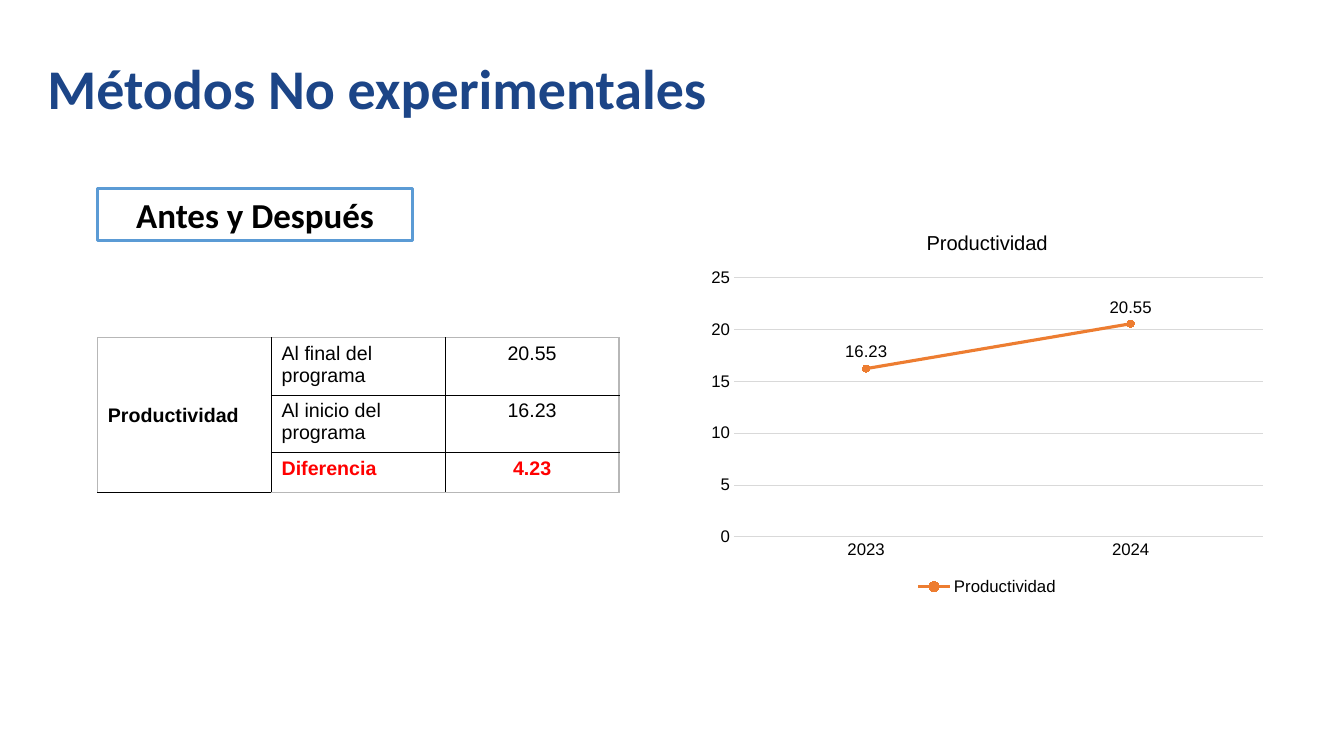
from lxml import etree
from pptx import Presentation
from pptx.chart.data import CategoryChartData
from pptx.dml.color import RGBColor
from pptx.enum.chart import (XL_CHART_TYPE, XL_LABEL_POSITION, XL_LEGEND_POSITION,
                             XL_MARKER_STYLE, XL_TICK_MARK)
from pptx.enum.shapes import MSO_SHAPE
from pptx.enum.text import MSO_ANCHOR, MSO_AUTO_SIZE, PP_ALIGN
from pptx.oxml.ns import qn
from pptx.util import Inches, Pt

LINE_CHART = XL_CHART_TYPE.LINE_MARKERS
ABOVE = XL_LABEL_POSITION.ABOVE
BOTTOM = XL_LEGEND_POSITION.BOTTOM
CIRCLE = XL_MARKER_STYLE.CIRCLE
NO_TICK = XL_TICK_MARK.NONE
RECTANGLE = MSO_SHAPE.RECTANGLE
TOP, MIDDLE = MSO_ANCHOR.TOP, MSO_ANCHOR.MIDDLE
GROW = MSO_AUTO_SIZE.SHAPE_TO_FIT_TEXT
LEFT, CENTER = PP_ALIGN.LEFT, PP_ALIGN.CENTER

TITLE_ONLY = 5
BLACK, WHITE, RED = "000000", "FFFFFF", "FF0000"
NAVY, BLUE, ORANGE = "1C4587", "5B9BD5", "ED7D31"
GRID_GRAY, FRAME_GRAY = "D9D9D9", "B7B7B7"

TITLE_FONT = {"name": "Calibri", "size": Pt(40), "bold": True}
METHOD_FONT = {"name": "Calibri", "size": Pt(25), "bold": True}
CELL_FONT = {"name": "Arial", "size": Pt(14), "bold": False}
CELL_BOLD = {**CELL_FONT, "bold": True}
CHART_FONT = {"name": "Arial", "size": Pt(12), "bold": False}
CHART_TITLE_FONT = {**CHART_FONT, "size": Pt(14.4)}

MEASURE = "Productividad"
RESULTS = [("Al final del programa", "20.55"),
           ("Al inicio del programa", "16.23"),
           ("Diferencia", "4.23")]
YEARS = {"2023": 16.23, "2024": 20.55}


def rgb(hex_color):
    return RGBColor.from_string(hex_color)


def format_font(font, values, color):
    for attribute, value in values.items():
        setattr(font, attribute, value)
    font.color.rgb = rgb(color)


def format_line(line, color, width):
    line.color.rgb = rgb(color)
    line.width = Pt(width)


def write(frame, text, font, color, align=LEFT):
    paragraph = frame.paragraphs[0]
    paragraph.alignment = align
    run = paragraph.add_run()
    run.text = text
    format_font(run.font, font, color)


def add_title(slide, text):
    title = slide.shapes.title
    title.left, title.top = Inches(0.37), Inches(0.43)
    title.width, title.height = Inches(12.59), Inches(0.88)
    frame = title.text_frame
    layout = {"margin_left": Inches(0.1), "margin_right": Inches(0.1),
              "margin_top": Inches(0.1), "margin_bottom": Inches(0.1),
              "vertical_anchor": TOP, "word_wrap": True, "auto_size": GROW}
    for attribute, value in layout.items():
        setattr(frame, attribute, value)
    write(frame, text, TITLE_FONT, NAVY)
    frame.paragraphs[0].line_spacing = 1.0


def add_method_box(slide, text):
    box = slide.shapes.add_shape(RECTANGLE, Inches(0.97), Inches(1.87),
                                 Inches(3.12), Inches(0.52))
    box.shadow.inherit = False
    box.fill.solid()
    box.fill.fore_color.rgb = rgb(WHITE)
    format_line(box.line, BLUE, 2.25)
    box.text_frame.word_wrap = True
    box.text_frame.auto_size = GROW
    box.text_frame.vertical_anchor = MIDDLE
    write(box.text_frame, text, METHOD_FONT, BLACK, CENTER)


def set_borders(cell, colors):
    properties = cell._tc.get_or_add_tcPr()
    # Borders come before the fill in the cell properties
    for index, (side, color) in enumerate(colors.items()):
        border = etree.Element(qn(f"a:ln{side}"), w=str(Pt(1)))
        fill = etree.SubElement(border, qn("a:solidFill"))
        etree.SubElement(fill, qn("a:srgbClr"), val=color)
        properties.insert(index, border)


def add_results_table(slide):
    row_count, column_count = len(RESULTS), 3
    table = slide.shapes.add_table(row_count, column_count, Inches(0.97), Inches(3.35),
                                   Inches(5.17), Inches(1.54)).table
    table.first_row = table.horz_banding = False
    for column in table.columns:
        column.width = Inches(5.17 / column_count)
    for row, height in zip(table.rows, (0.57, 0.57, 0.4)):
        row.height = Inches(height)

    # Gray outer frame, black inner rules
    for r in range(row_count):
        for c in range(column_count):
            cell = table.cell(r, c)
            cell.fill.background()
            outer = {"L": c == 0, "R": c == column_count - 1,
                     "T": r == 0, "B": r == row_count - 1}
            set_borders(cell, {side: FRAME_GRAY if is_outer else BLACK
                               for side, is_outer in outer.items()})

    measure = table.cell(0, 0)
    measure.merge(table.cell(row_count - 1, 0))
    measure.vertical_anchor = MIDDLE
    write(measure.text_frame, MEASURE, CELL_BOLD, BLACK)
    for r, (label, value) in enumerate(RESULTS):
        is_difference = r == row_count - 1
        font, color = (CELL_BOLD, RED) if is_difference else (CELL_FONT, BLACK)
        write(table.cell(r, 1).text_frame, label, font, color)
        write(table.cell(r, 2).text_frame, value, font, color, CENTER)


def format_axis(axis):
    axis.major_tick_mark = axis.minor_tick_mark = NO_TICK
    format_font(axis.tick_labels.font, CHART_FONT, BLACK)


def add_productivity_chart(slide):
    data = CategoryChartData()
    data.categories = list(YEARS)
    data.add_series(MEASURE, list(YEARS.values()))
    chart = slide.shapes.add_chart(LINE_CHART, Inches(6.94), Inches(2.12),
                                   Inches(5.7), Inches(3.83), data).chart
    format_font(chart.font, CHART_FONT, BLACK)
    write(chart.chart_title.text_frame, MEASURE, CHART_TITLE_FONT, BLACK, CENTER)
    chart.chart_title.include_in_layout = False
    chart.has_legend = True
    chart.legend.position = BOTTOM
    chart.legend.include_in_layout = False
    format_font(chart.legend.font, CHART_FONT, BLACK)

    # Axes
    years, scale = chart.category_axis, chart.value_axis
    format_axis(years)
    format_axis(scale)
    format_line(years.format.line, GRID_GRAY, 0.75)
    scale.format.line.fill.background()
    scale.minimum_scale, scale.maximum_scale, scale.major_unit = 0, 25, 5
    format_line(scale.major_gridlines.format.line, GRID_GRAY, 0.75)

    # Series
    plot = chart.plots[0]
    plot.vary_by_categories = False
    productivity = plot.series[0]
    productivity.smooth = False
    format_line(productivity.format.line, ORANGE, 2.25)
    marker = productivity.marker
    marker.style, marker.size = CIRCLE, 5
    marker.format.fill.solid()
    marker.format.fill.fore_color.rgb = rgb(ORANGE)
    format_line(marker.format.line, ORANGE, 0.75)
    labels = productivity.data_labels
    labels.show_value = True
    labels.position = ABOVE
    format_font(labels.font, CHART_FONT, BLACK)


def main():
    deck = Presentation()
    deck.slide_width, deck.slide_height = Inches(13.33), Inches(7.5)
    slide = deck.slides.add_slide(deck.slide_layouts[TITLE_ONLY])
    add_title(slide, "Métodos No experimentales")
    add_method_box(slide, "Antes y Después")
    add_results_table(slide)
    add_productivity_chart(slide)
    deck.save("out.pptx")


if __name__ == "__main__":
    main()
